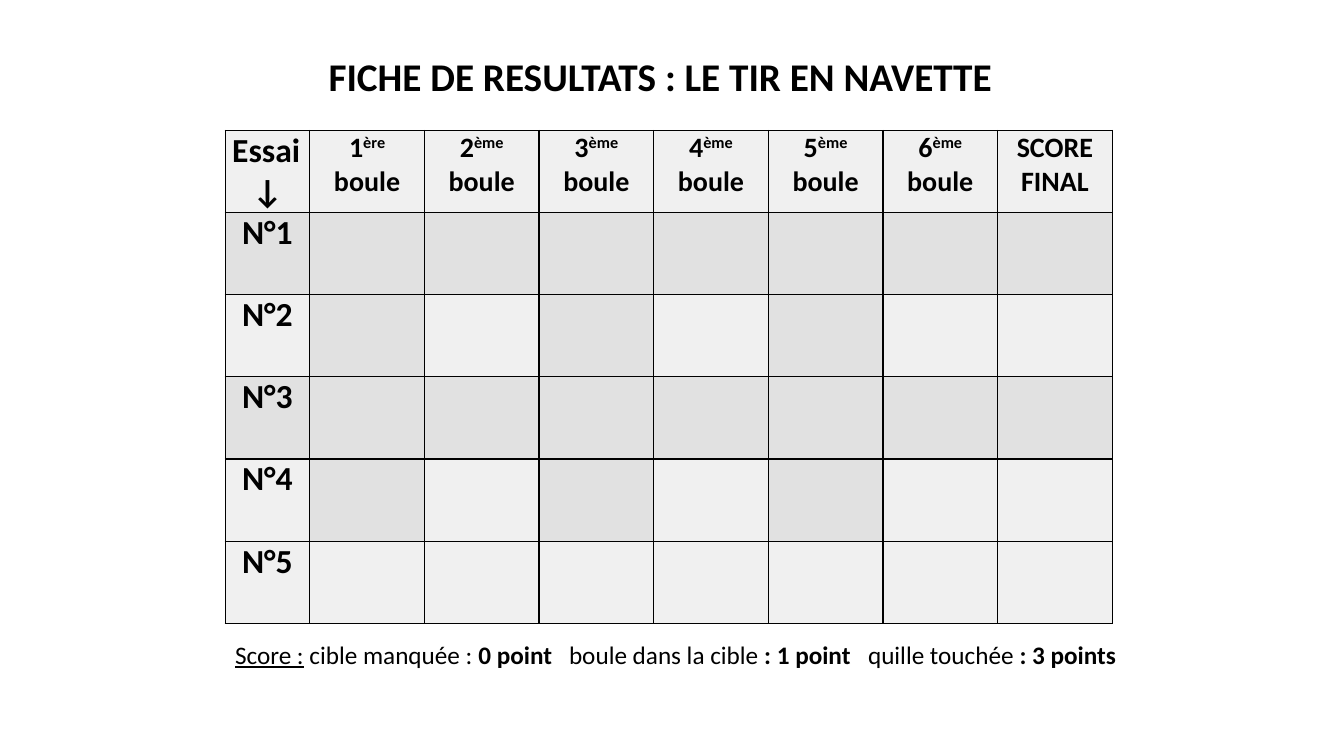
"""Build the score sheet slide for the shuttle throwing game."""
import pptx
import pptx.util
import pptx.dml.color
import pptx.enum.text
import pptx.oxml.ns
import lxml.etree

THEME = {
    "font": "Calibri", "ink": "000000", "light": "F0F0F0", "dark": "E1E1E1",
    "title": 28, "label": 24, "head": 20, "note": 18, "line": 1,
}
ALIGN = pptx.enum.text.PP_ALIGN
ANCHOR = pptx.enum.text.MSO_ANCHOR
RGB = pptx.dml.color.RGBColor.from_string
qn = pptx.oxml.ns.qn


def write(para, text, size, bold=True, under=False, raised=False, align=ALIGN.CENTER):
    """Add one run of text to a paragraph."""
    para.alignment = align
    run = para.add_run()
    run.text = text
    font = run.font
    font.name, font.size = THEME["font"], pptx.util.Pt(size)
    font.bold, font.underline = bold, under
    font.color.rgb = RGB(THEME["ink"])
    if raised:
        font._element.set("baseline", "30000")


def edge(cell):
    """Draw the four borders of a table cell."""
    props = cell._tc.get_or_add_tcPr()
    for side in ("lnL", "lnR", "lnT", "lnB"):
        line = lxml.etree.SubElement(props, qn("a:" + side), w=str(pptx.util.Pt(THEME["line"])))
        fill = lxml.etree.SubElement(line, qn("a:solidFill"))
        lxml.etree.SubElement(fill, qn("a:srgbClr"), val=THEME["ink"])


deck = pptx.Presentation()
deck.slide_width = pptx.util.Inches(13.33)
deck.slide_height = pptx.util.Inches(7.5)
slide = deck.slides.add_slide(deck.slide_layouts[6])
col, row = deck.slide_width / 100, deck.slide_height / 100

left, top = 16.75 * col, 17.25 * row
lead, ball, step = 6.3 * col, 8.53 * col, 10.87 * row
balls, tries = 6, 5
wide, high = lead + (balls + 1) * ball, (tries + 1) * step

frame = slide.shapes.add_table(
    tries + 1, balls + 2, int(left), int(top), int(wide), int(high))
table = frame.table
table.first_row = table.horz_banding = False
for c, part in enumerate(table.columns):
    part.width = int(ball if c else lead)
for part in table.rows:
    part.height = int(step)

for r in range(tries + 1):
    for c in range(balls + 2):
        cell = table.cell(r, c)
        cell.margin_left = cell.margin_right = pptx.util.Inches(0.07)
        cell.margin_top = cell.margin_bottom = 0
        edge(cell)
        odd = r in (1, 3) or (r in (2, 4) and c in (1, 3, 5))
        cell.fill.solid()
        cell.fill.fore_color.rgb = RGB(THEME["dark" if odd else "light"])
        para = cell.text_frame.paragraphs[0]
        if r and c == 0:
            write(para, f"N°{r}", THEME["label"])
        elif r == 0 and c == 0:
            write(para, "Essai", THEME["label"], align=ALIGN.LEFT)
            write(cell.text_frame.add_paragraph(), "↓", THEME["label"])
        elif r == 0 and c <= balls:
            write(para, str(c), THEME["head"])
            write(para, "ère" if c == 1 else "ème", THEME["head"], raised=True)
            write(para, " boule", THEME["head"])
        elif r == 0:
            write(para, "SCORE FINAL", THEME["head"])

note = slide.shapes.add_textbox(
    int(left), int(81.33 * row), int(67.88 * col), int(7.87 * row)).text_frame
note.word_wrap = True
note.vertical_anchor = ANCHOR.BOTTOM
para = note.paragraphs[0]
for text, bold, under in (
    ("Score :", False, True),
    (" cible manquée : ", False, False),
    ("0 point", True, False),
    ("\tboule dans la cible ", False, False),
    (": 1 point", True, False),
    ("\tquille touchée ", False, False),
    (": 3 points", True, False),
):
    write(para, text, THEME["note"], bold=bold, under=under, align=ALIGN.LEFT)
tabs = lxml.etree.SubElement(para._p.get_or_add_pPr(), qn("a:tabLst"))
for stop in (24.85, 47.1):
    lxml.etree.SubElement(tabs, qn("a:tab"), pos=str(int(stop * col)), algn="l")

title = slide.shapes.add_textbox(
    int(11.92 * col), int(6.27 * row), int(74.4 * col), int(7.6 * row)).text_frame
title.word_wrap = True
write(title.paragraphs[0], "FICHE DE RESULTATS : LE TIR EN NAVETTE", THEME["title"])

deck.save("out.pptx")
